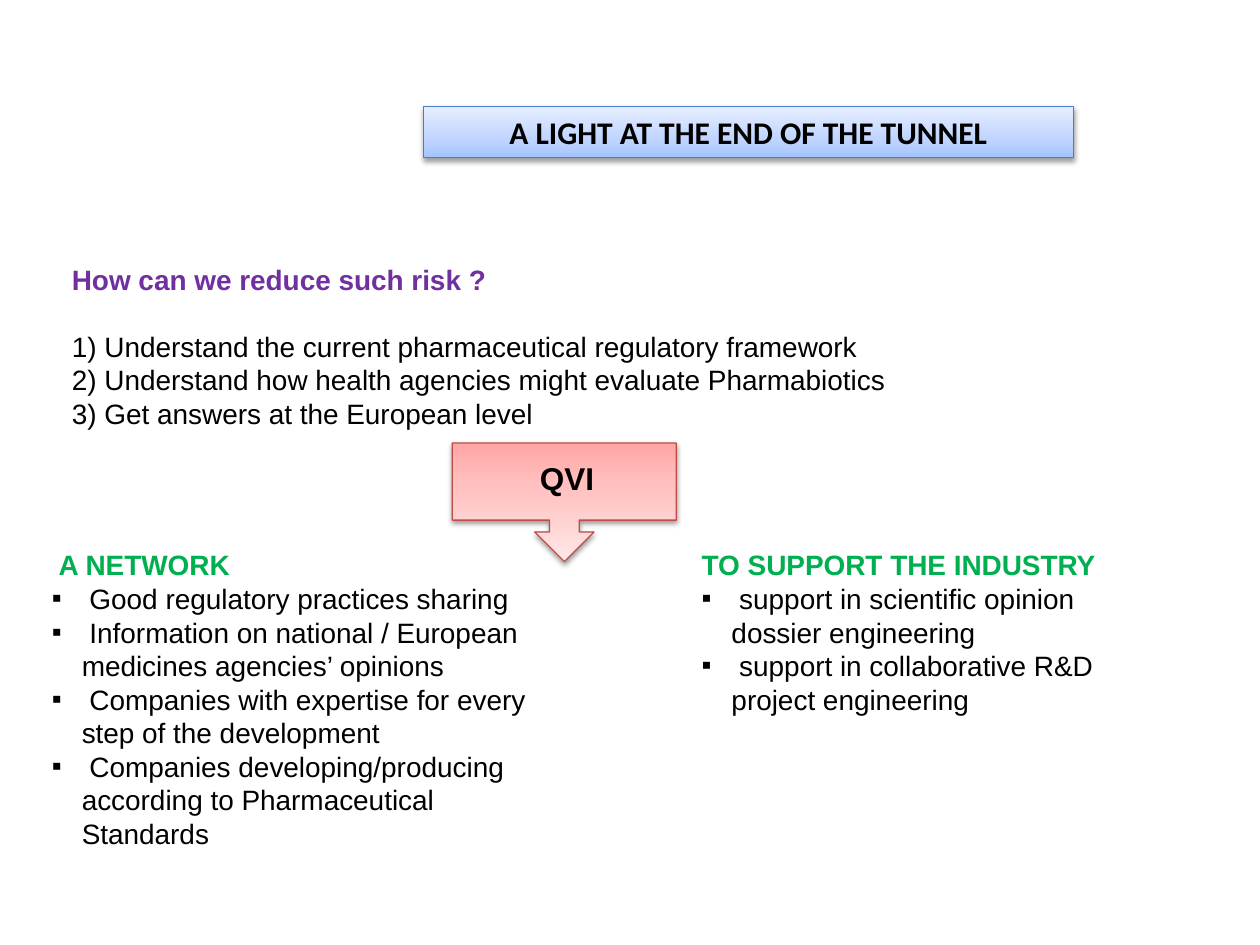
import copy

import pptx
import pptx.dml.color
import pptx.enum.shapes
import pptx.enum.text
import pptx.oxml
import pptx.oxml.ns
import pptx.util

Pt = pptx.util.Pt
RGB = pptx.dml.color.RGBColor
qn = pptx.oxml.ns.qn

BLACK = RGB(0x00, 0x00, 0x00)
PURPLE = RGB(0x70, 0x30, 0xA0)
GREEN = RGB(0x00, 0xB0, 0x50)
BLUE_LINE = RGB(0x4B, 0x7E, 0xBC)
BLUES = (RGB(0xA4, 0xC4, 0xFF), RGB(0xBF, 0xD4, 0xFF), RGB(0xE6, 0xEE, 0xFF))
RED_LINE = RGB(0xBF, 0x4C, 0x48)
REDS = (RGB(0xFF, 0xA6, 0xA5), RGB(0xFF, 0xC0, 0xBF), RGB(0xFF, 0xE7, 0xE7))

STOPS = (0, 0.35, 1)
BULLET_INDENT = 17

NETWORK = (
    " Good regulatory practices sharing",
    " Information on national / European medicines agencies’ opinions",
    " Companies with expertise for every step of the development",
    " Companies developing/producing according to Pharmaceutical Standards",
)
SUPPORT = (
    " support in scientific opinion dossier engineering",
    " support in collaborative R&D project engineering",
)
STEPS = (
    "1) Understand the current pharmaceutical regulatory framework",
    "2) Understand how health agencies might evaluate Pharmabiotics",
    "3) Get answers at the European level",
)


def place(sp, left, top, width, height):
    sp.left, sp.top, sp.width, sp.height = map(Pt, (left, top, width, height))


def prepare_text(sp, anchor=pptx.enum.text.MSO_ANCHOR.TOP):
    tf = sp.text_frame
    tf.word_wrap = True
    tf.auto_size = pptx.enum.text.MSO_AUTO_SIZE.NONE
    tf.vertical_anchor = anchor
    return tf


def add_run(p, text, size=16, color=BLACK, bold=False, font="Arial"):
    r = p.add_run()
    r.text = text
    r.font.name, r.font.size, r.font.bold = font, Pt(size), bold
    r.font.color.rgb = color


def style_panel(sp, colors, line_color):
    """Three-stop gradient, thin outline and soft shadow below."""
    sp.fill.gradient()
    stop_list = sp._element.spPr.find(qn("a:gradFill")).find(qn("a:gsLst"))
    stop_list.insert(1, copy.deepcopy(stop_list[0]))
    sp.fill.gradient_angle = 90
    for stop, position, color in zip(sp.fill.gradient_stops, STOPS, colors):
        stop.position = position
        stop.color.rgb = color
    sp.line.color.rgb = line_color
    sp.line.width = Pt(0.75)
    sp.shadow.inherit = False
    sp._element.spPr.find(qn("a:effectLst")).append(pptx.oxml.parse_xml(
        f'<a:outerShdw {pptx.oxml.ns.nsdecls("a")} blurRad="{Pt(3.1)}" '
        f'dist="{Pt(1.6)}" dir="5400000" rotWithShape="0">'
        '<a:srgbClr val="000000"><a:alpha val="38000"/></a:srgbClr>'
        '</a:outerShdw>'))


def set_bullet(p, char=None):
    pPr = p._p.get_or_add_pPr()
    indent = Pt(BULLET_INDENT) if char else 0
    pPr.set("marL", str(indent))
    pPr.set("indent", str(-indent))
    ns = pptx.oxml.ns.nsdecls("a")
    if char:
        pPr.append(pptx.oxml.parse_xml(f'<a:buFont {ns} typeface="Arial"/>'))
        pPr.append(pptx.oxml.parse_xml(f'<a:buChar {ns} char="{char}"/>'))
    else:
        pPr.append(pptx.oxml.parse_xml(f'<a:buNone {ns}/>'))


def fill_list(sp, heading, color, items, bullet=None, gap=0):
    """Bold coloured heading followed by plain or bulleted lines."""
    tf = prepare_text(sp)
    for i, text in enumerate((heading, *items)):
        p = tf.add_paragraph() if i else tf.paragraphs[0]
        p.space_before = Pt(gap if i == 1 else 0)
        set_bullet(p, bullet if i else None)
        if i:
            add_run(p, text)
        else:
            add_run(p, text, color=color, bold=True)


def add_title(s, text):
    sp = s.shapes.title
    place(sp, 242, 61, 371.5, 29)
    style_panel(sp, BLUES, BLUE_LINE)
    p = prepare_text(sp, pptx.enum.text.MSO_ANCHOR.MIDDLE).paragraphs[0]
    p.alignment = pptx.enum.text.PP_ALIGN.CENTER
    add_run(p, text, 18, bold=True, font="Calibri")


def add_callout(s, text):
    # Callout pointing down, with an upright label over it
    sp = s.shapes.add_shape(
        pptx.enum.shapes.MSO_SHAPE.UP_ARROW_CALLOUT,
        Pt(258.5), Pt(253.2), Pt(128), Pt(67.8))
    sp._element.spPr.find(qn("a:xfrm")).set("flipV", "1")
    style_panel(sp, REDS, RED_LINE)
    label = s.shapes.add_textbox(Pt(234), Pt(258.5), Pt(180), Pt(29))
    p = prepare_text(label).paragraphs[0]
    p.alignment = pptx.enum.text.PP_ALIGN.CENTER
    add_run(p, text, 18, bold=True)


def main():
    prs = pptx.Presentation()
    prs.slide_width, prs.slide_height = Pt(720), Pt(540)
    s = prs.slides.add_slide(prs.slide_layouts.get_by_name("Two Content"))

    # Title panel
    add_title(s, "A LIGHT AT THE END OF THE TUNNEL")

    # Question and numbered steps
    question = s.shapes.add_textbox(Pt(34), Pt(146.5), Pt(636), Pt(106.5))
    fill_list(question, "How can we reduce such risk ?", PURPLE, STEPS, gap=19)

    # Answer
    add_callout(s, "QVI")

    # Two columns
    network, support = s.placeholders[1], s.placeholders[2]
    place(network, 22.5, 309.5, 298, 163)
    fill_list(network, " A NETWORK", GREEN, NETWORK, "▪")
    place(support, 393.8, 309.5, 276, 104.5)
    fill_list(support, "TO SUPPORT THE INDUSTRY", GREEN, SUPPORT, "▪")

    prs.save("out.pptx")


if __name__ == "__main__":
    main()
